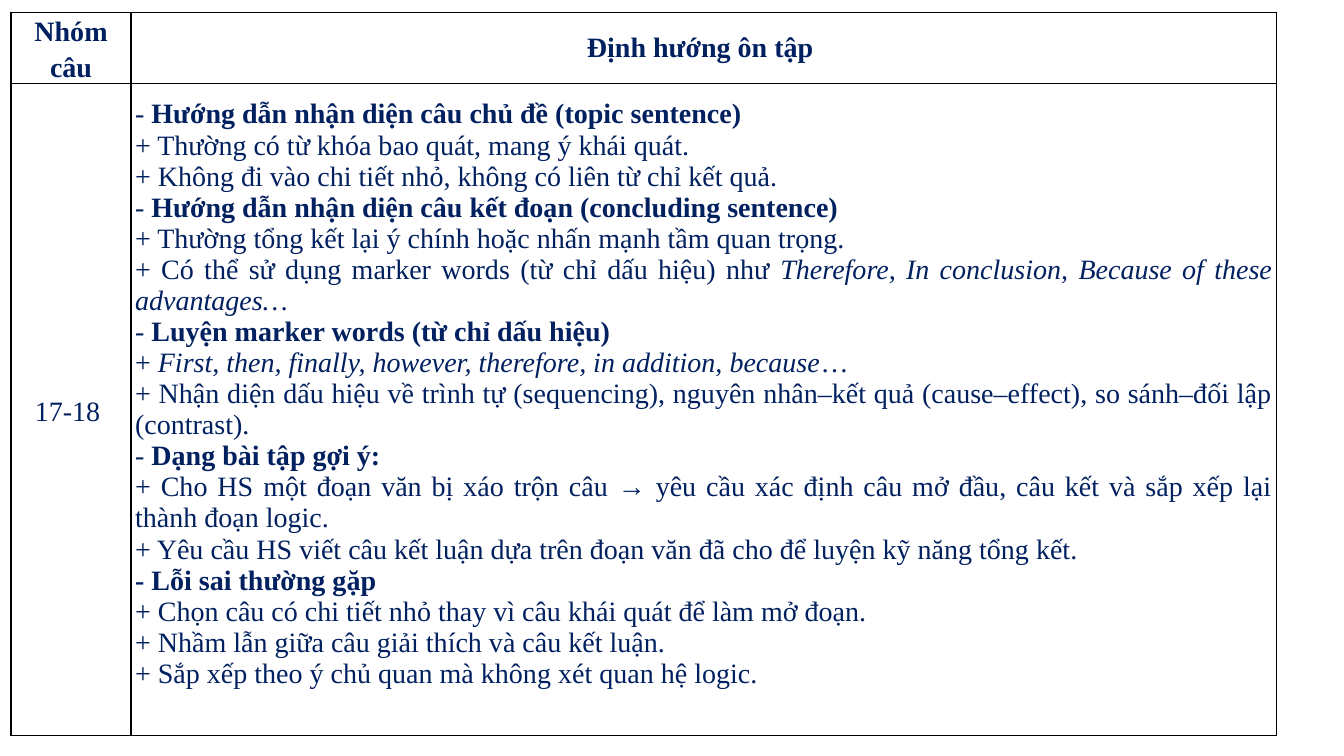
from lxml import etree
from pptx import Presentation
from pptx.dml.color import RGBColor
from pptx.enum import text
from pptx.oxml import ns
from pptx.util import Inches, Pt

# Content: a paragraph is a list of (words, style); style is "", "b" or "i"
HEADERS = ["Nhóm câu", "Định hướng ôn tập "]
GROUP = "17-18 "
GUIDANCE = [
    [("- ", ""), ("Hướng dẫn nhận diện câu chủ đề (topic sentence)", "b")],
    [("+ Thường có từ khóa bao quát, mang ý khái quát.", "")],
    [("+ Không đi vào chi tiết nhỏ, không có liên từ chỉ kết quả.", "")],
    [("- ", ""), ("Hướng dẫn nhận diện câu kết đoạn (concluding sentence)", "b")],
    [("+ Thường tổng kết lại ý chính hoặc nhấn mạnh tầm quan trọng.", "")],
    [("+ Có thể sử dụng marker words (từ chỉ dấu hiệu) như ", ""),
     ("Therefore, In conclusion, Because of these advantages…", "i")],
    [("- ", ""), ("Luyện marker words (từ chỉ dấu hiệu)", "b")],
    [("+ ", ""),
     ("First, then, finally, however, therefore, in addition, because", "i"),
     ("…", "")],
    [("+ Nhận diện dấu hiệu về trình tự (sequencing), nguyên nhân–kết quả "
      "(cause–effect), so sánh–đối lập (contrast).", "")],
    [("- ", ""), ("Dạng bài tập gợi ý: ", "b")],
    [("+ Cho HS một đoạn văn bị xáo trộn câu → yêu cầu xác định câu mở đầu, "
      "câu kết và sắp xếp lại thành đoạn logic.", "")],
    [("+ Yêu cầu HS viết câu kết luận dựa trên đoạn văn đã cho để luyện "
      "kỹ năng tổng kết.", "")],
    [("- Lỗi sai thường gặp", "b")],
    [("+ Chọn câu có chi tiết nhỏ thay vì câu khái quát để làm mở đoạn.", "")],
    [("+ Nhầm lẫn giữa câu giải thích và câu kết luận.", "")],
    [("+ Sắp xếp theo ý chủ quan mà không xét quan hệ logic.", "")],
]
CELLS = [
    [[[(header, "b")]] for header in HEADERS],
    [[[(GROUP, "")]], GUIDANCE],
]

# Layout and style
LEFT, TOP = 0.11, 0.12
COLUMNS = [1.19, 11.36]
ROWS = [0.71, 6.47]
BOTTOM_GAP = 0.31
FONT = "Times New Roman"
NAVY = RGBColor(0x00, 0x20, 0x60)
BLACK = RGBColor(0x00, 0x00, 0x00)


def add_borders(cell):
    properties = cell._tc.get_or_add_tcPr()
    for position, side in enumerate(("lnL", "lnR", "lnT", "lnB")):
        line = etree.Element(ns.qn(f"a:{side}"), w=str(Pt(1)))
        fill = etree.SubElement(line, ns.qn("a:solidFill"))
        etree.SubElement(fill, ns.qn("a:srgbClr"), val=str(BLACK))
        properties.insert(position, line)


def write_cell(cell, paragraphs):
    frame = cell.text_frame
    for index, runs in enumerate(paragraphs):
        paragraph = frame.paragraphs[0] if index == 0 else frame.add_paragraph()
        justified = paragraphs is GUIDANCE
        paragraph.alignment = (text.PP_ALIGN.JUSTIFY if justified
                               else text.PP_ALIGN.CENTER)
        for words, style in runs:
            run = paragraph.add_run()
            run.text = words
            font = run.font
            font.name, font.size = FONT, Pt(20)
            font.color.rgb = NAVY
            font.bold, font.italic = style == "b", style == "i"


presentation = Presentation()
presentation.slide_width = Inches(13.33)
presentation.slide_height = Inches(7.5)
slide = presentation.slides.add_slide(presentation.slide_layouts[6])

# Table
table = slide.shapes.add_table(
    len(ROWS), len(COLUMNS), Inches(LEFT), Inches(TOP),
    Inches(sum(COLUMNS)), Inches(sum(ROWS))).table
table.first_row = table.horz_banding = False
for column, width in zip(table.columns, COLUMNS):
    column.width = Inches(width)
for row, height in zip(table.rows, ROWS):
    row.height = Inches(height)

for row_index, row_cells in enumerate(CELLS):
    for column_index, paragraphs in enumerate(row_cells):
        cell = table.cell(row_index, column_index)
        cell.fill.background()
        cell.vertical_anchor = text.MSO_ANCHOR.MIDDLE
        cell.margin_left = cell.margin_right = Inches(0.04)
        cell.margin_top = cell.margin_bottom = 0
        write_cell(cell, paragraphs)
        add_borders(cell)
        if column_index == 0:
            paragraph = cell.text_frame.paragraphs[0]
            paragraph.line_spacing = 1.15
            paragraph.space_after = Pt(8)

# The guidance sits slightly above the middle of its cell
table.cell(1, 1).margin_bottom = Inches(BOTTOM_GAP)

presentation.save("out.pptx")
